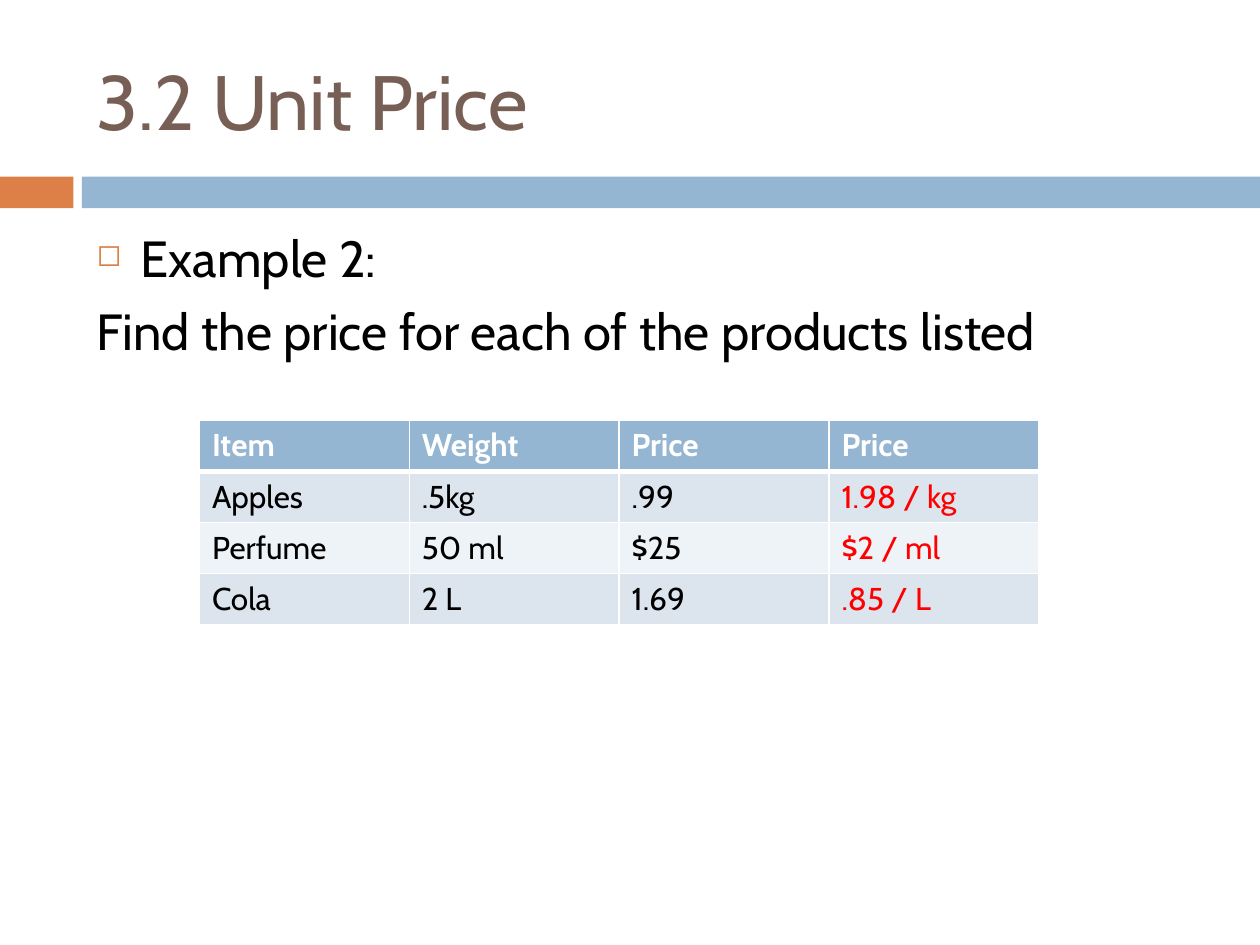
from lxml.etree import SubElement
from pptx import Presentation
from pptx.dml.color import RGBColor
from pptx.enum.shapes import MSO_SHAPE
from pptx.enum.text import MSO_ANCHOR
from pptx.oxml.ns import qn
from pptx.util import Cm, Pt

FONT = "Cabin"
BLUE, ORANGE, BROWN = "94B6D2", "DD8047", "775F55"
WHITE, BLACK, RED = "FFFFFF", "000000", "FF0000"
BANDS = ["DCE5EE", "EEF3F7"]

PRICES = [
    ["Item", "Weight", "Price", "Price"],
    ["Apples", ".5kg", ".99", "1.98 / kg"],
    ["Perfume", "50 ml", "$25", "$2 / ml"],
    ["Cola", "2 L", "1.69", ".85 / L"],
]


def color(hex_text):
    return RGBColor.from_string(hex_text)


def write(para, text, size, hex_text, bold=False):
    span = para.add_run()
    span.text = text
    formats = {"name": FONT, "size": Pt(size), "bold": bold}
    for name, value in formats.items():
        setattr(span.font, name, value)
    span.font.color.rgb = color(hex_text)


def add_bar(page, left, width, hex_text):
    bar = page.shapes.add_shape(
        MSO_SHAPE.RECTANGLE, Cm(left), Cm(3.56), Cm(width), Cm(0.64))
    bar.shadow.inherit = False
    bar.fill.solid()
    bar.fill.fore_color.rgb = color(hex_text)
    bar.line.fill.background()


def add_text(page, top, height, lines, size, hex_text, anchor, space=0):
    box = page.shapes.add_textbox(Cm(1.7), Cm(top), Cm(22.66), Cm(height))
    frame = box.text_frame
    for name, value in {"word_wrap": True, "vertical_anchor": anchor}.items():
        setattr(frame, name, value)
    for index, line in enumerate(lines):
        para = frame.add_paragraph() if index else frame.paragraphs[0]
        para.space_before = Pt(space)
        write(para, line, size, hex_text)
    return frame


def add_bullet(para, mark, hex_text, percent):
    props = para._p.get_or_add_pPr()
    indent = Cm(0.89)
    props.set("marL", str(indent))
    props.set("indent", str(-indent))
    tint = SubElement(props, qn("a:buClr"))
    SubElement(tint, qn("a:srgbClr"), val=hex_text)
    SubElement(props, qn("a:buSzPct"), val=str(percent * 1000))
    SubElement(props, qn("a:buChar"), char=mark)


def add_borders(cell, widths):
    props = cell._tc.get_or_add_tcPr()
    for side, width in widths.items():
        line = SubElement(props, qn(f"a:ln{side}"), w=str(Pt(width)))
        fill = SubElement(line, qn("a:solidFill"))
        SubElement(fill, qn("a:srgbClr"), val=WHITE)


def add_price_table(page, rows):
    row_height, column_width = Cm(1.03), Cm(4.23)
    row_count, column_count = len(rows), len(rows[0])
    table = page.shapes.add_table(
        row_count, column_count, Cm(4.02), Cm(8.47),
        column_width * column_count, row_height * row_count).table
    for column in table.columns:
        column.width = column_width
    for r, row in enumerate(rows):
        table.rows[r].height = row_height
        for c, text in enumerate(row):
            cell = table.cell(r, c)
            header = r == 0
            # The rule under the header row is thicker than the others
            add_borders(cell, {"L": 1, "R": 1, "T": 3 if r == 1 else 1,
                               "B": 3 if header else 1})
            cell.fill.solid()
            cell.fill.fore_color.rgb = color(BLUE if header else BANDS[(r - 1) % 2])
            answer = RED if c == column_count - 1 else BLACK
            write(cell.text_frame.paragraphs[0], text, 18,
                  WHITE if header else answer, header)


def main():
    deck = Presentation()
    deck.slide_width, deck.slide_height = Cm(25.4), Cm(19.05)
    page = deck.slides.add_slide(deck.slide_layouts[6])

    # Divider bars
    add_bar(page, 0, 1.48, ORANGE)
    add_bar(page, 1.65, 23.75, BLUE)

    # Title and question
    add_text(page, 0.64, 2.74, ["3.2 Unit Price"], 44, BROWN, MSO_ANCHOR.MIDDLE)
    question = add_text(
        page, 4.45, 12.5,
        ["Example 2:", "Find the price for each of the products listed"],
        29, BLACK, MSO_ANCHOR.TOP, 7)
    add_bullet(question.paragraphs[0], "◻", ORANGE, 60)

    # Unit prices
    add_price_table(page, PRICES)
    deck.save("out.pptx")


if __name__ == "__main__":
    main()
